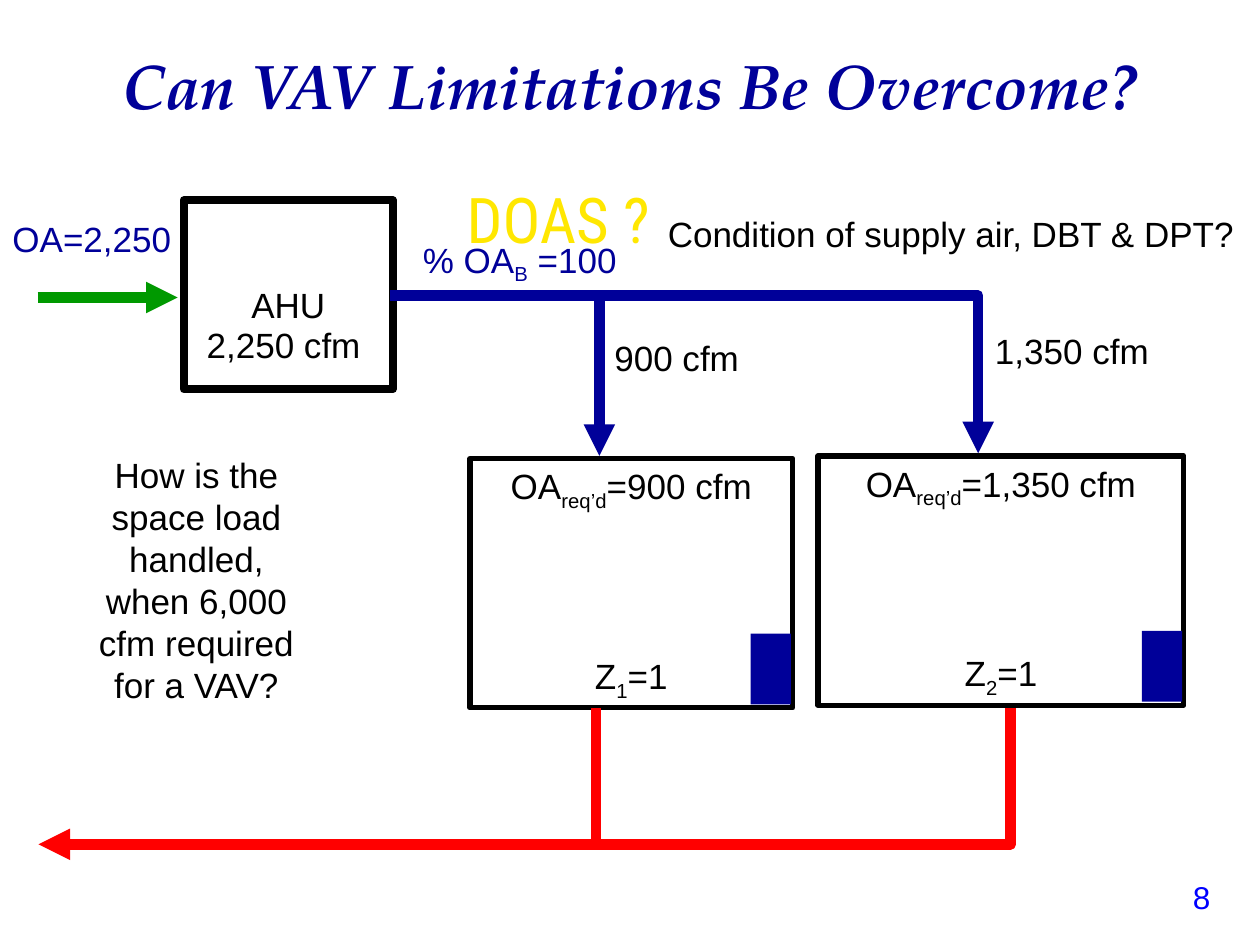
from pptx import Presentation
from pptx.dml.color import RGBColor
from pptx.enum import shapes, text
from pptx.oxml.ns import qn
from pptx.util import Pt
from lxml import etree

COLORS = {"ink": "000000", "navy": "000099", "green": "009900", "red": "FF0000",
          "number": "0000FF", "doas": "FFE701"}
ALIGN = {"l": text.PP_ALIGN.LEFT, "c": text.PP_ALIGN.CENTER}


def rgb(name):
    return RGBColor.from_string(COLORS[name])


def write(p, parts, color="ink", size=20, font="Arial", align="l"):
    """Fill a paragraph; every second part is a subscript."""
    p.alignment = ALIGN[align]
    for i, part in enumerate(parts):
        r = p.add_run()
        r.text = part
        r.font.size, r.font.name = Pt(size), font
        r.font.color.rgb = rgb(color)
        if i % 2:
            r.font._element.set("baseline", "-25000")


def label(s, box, *parts, **style):
    tf = s.shapes.add_textbox(*map(Pt, box)).text_frame
    tf.word_wrap = True
    write(tf.paragraphs[0], parts, **style)


def rect(s, box, line=None, fill=None):
    sp = s.shapes.add_shape(shapes.MSO_SHAPE.RECTANGLE, *map(Pt, box))
    sp.shadow.inherit = False
    if fill:
        sp.fill.solid()
        sp.fill.fore_color.rgb = rgb(fill)
    else:
        sp.fill.background()
    if line:
        sp.line.color.rgb, sp.line.width = rgb("ink"), Pt(line)
    else:
        sp.line.fill.background()
    return sp


def style_duct(sp, color, arrow):
    sp.line.color.rgb, sp.line.width = rgb(color), Pt(6)
    if arrow:
        etree.SubElement(sp.line._get_or_add_ln(), qn("a:tailEnd"), type="triangle")


def duct(s, start, end, color, arrow=True):
    sp = s.shapes.add_connector(shapes.MSO_CONNECTOR.STRAIGHT, *map(Pt, start + end))
    style_duct(sp, color, arrow)
    etree.SubElement(sp._element.spPr, qn("a:effectLst"))


def bent_duct(s, points, color, arrow=True):
    points = [tuple(map(Pt, point)) for point in points]
    fb = s.shapes.build_freeform(*points[0])
    fb.add_line_segments(points[1:], close=False)
    sp = fb.convert_to_shape()
    sp.shadow.inherit = False
    sp.fill.background()
    style_duct(sp, color, arrow)


def title(s, box):
    sp = s.shapes.title
    sp.left, sp.top, sp.width, sp.height = map(Pt, box)
    tf = sp.text_frame
    tf.vertical_anchor = text.MSO_ANCHOR.TOP
    write(tf.paragraphs[0], ["Can VAV Limitations Be Overcome?"], "navy", 36,
          "TeX Gyre Pagella", "c")
    font = tf.paragraphs[0].runs[0].font
    font.bold = font.italic = True


def zone(s, box, number, flow):
    """Room with its outdoor air need, efficiency and diffuser."""
    x, y, w, h = box
    tf = rect(s, box, line=3).text_frame
    tf.vertical_anchor = text.MSO_ANCHOR.TOP
    write(tf.paragraphs[0], ["OA", "req’d", f"={flow} cfm"], align="c")
    p = tf.add_paragraph()
    p.space_before = Pt(81)
    write(p, ["Z", number, "=1"], align="c")
    rect(s, (x + w - 24, y + h - 42.5, 23, 40.5), fill="navy")


def air_handler(s, box):
    """Unit with its outdoor air intake on the left."""
    x, y, w, h = box
    tf = rect(s, box, line=4.5).text_frame
    tf.vertical_anchor = text.MSO_ANCHOR.MIDDLE
    tf.margin_top = Pt(15)
    write(tf.paragraphs[0], ["AHU"], align="c")
    label(s, (x + 6, y + 67, 109.5, 31), "2,250 cfm")
    label(s, (x - 105, y + 6.5, 114.5, 31), "OA=2,250", color="navy")
    duct(s, (x - 83.5, y + 55.5), (x - 3.5, y + 55.5), "green")


def supply(s, box):
    """Supply main along the top, with one drop to each zone."""
    x, y, w, h = box
    bent_duct(s, [(x, y), (x + w, y), (x + w, y + h)], "navy")
    duct(s, (x + 119.5, y + 2), (x + 119.5, y + h + 1.5), "navy")
    label(s, (x + 11.5, y - 36.5, 140, 31), "% OA", "B", " =100", color="navy")
    label(s, (x + 121, y + 19.5, 103, 31), "900 cfm")
    label(s, (x + w + 2.5, y + 16, 127, 31), "1,350 cfm")


def return_air(s, box):
    """Return main along the bottom, with a riser from each zone."""
    x, y, w, h = box
    bottom = y + h
    bent_duct(s, [(x + 32, bottom), (x + w, bottom), (x + w, y)], "red", arrow=False)
    duct(s, (x + 318.5, y), (x + 318.5, bottom - 1.5), "red", arrow=False)
    duct(s, (x + 32, bottom), (x, bottom), "red")


def main():
    prs = Presentation()
    prs.slide_width, prs.slide_height = Pt(720), Pt(540)
    s = prs.slides.add_slide(prs.slide_layouts[5])

    title(s, (0, 23, 720, 65.5))

    # Air system
    zone(s, (268.5, 262, 184.5, 142.5), "1", "900")
    zone(s, (467.5, 260.5, 209, 142.5), "2", "1,350")
    air_handler(s, (105, 114.5, 119.5, 108))
    supply(s, (223, 169, 336, 90))
    return_air(s, (22, 404.5, 555.5, 78))

    # Questions
    label(s, (374.5, 118, 345.5, 31), "Condition of supply air, DBT & DPT?")
    label(s, (43, 255.5, 138.5, 151),
          "How is the space load handled, when 6,000 cfm required for a VAV?", align="c")
    label(s, (181.5, 99.5, 275, 50), "DOAS ?", color="doas", size=36,
          font="Roboto Condensed", align="c")

    # Slide number
    label(s, (674.5, 498, 45.5, 29), "8", color="number", size=18)

    prs.save("out.pptx")


if __name__ == "__main__":
    main()
